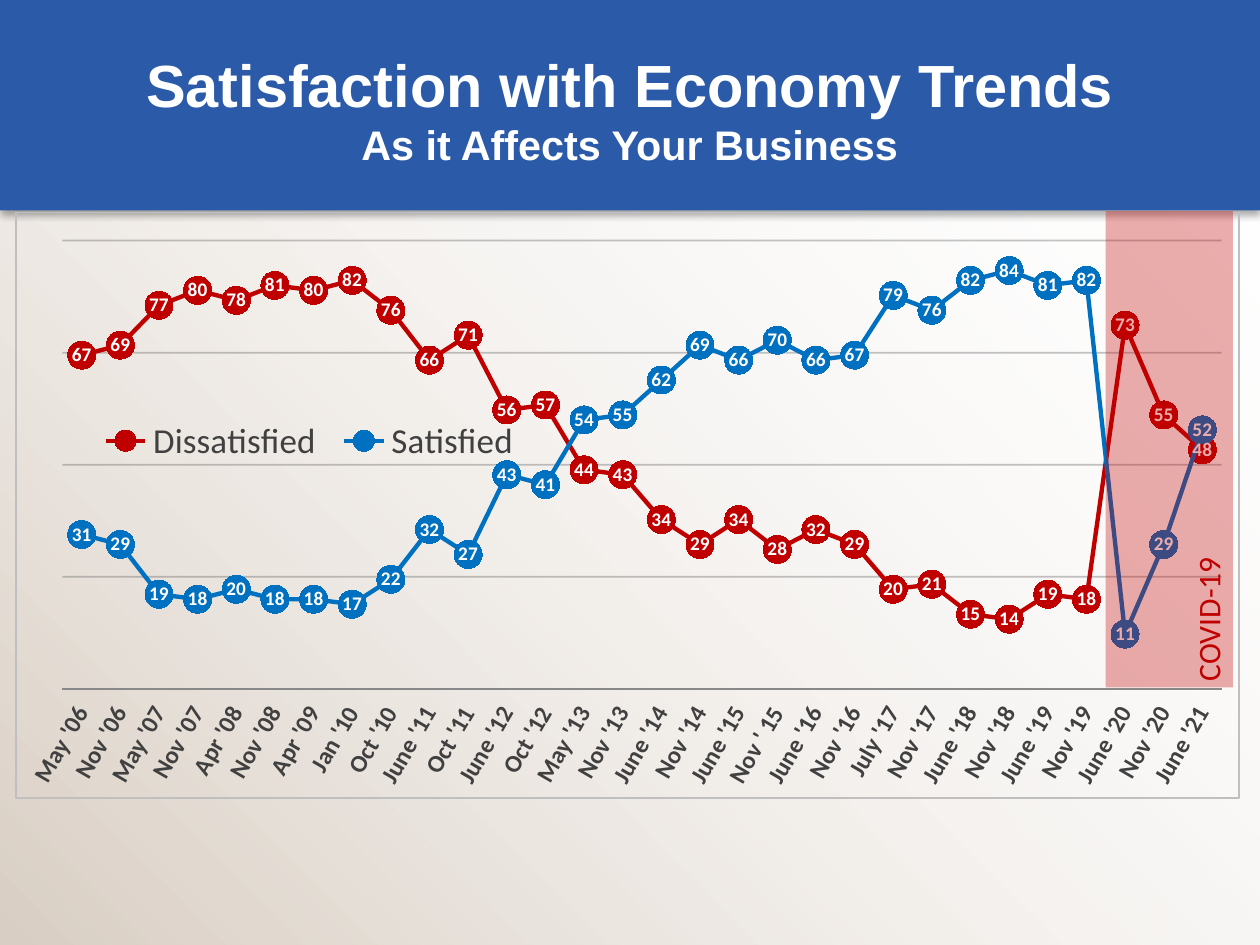
"""Build the slide on trends in satisfaction with the economy."""
from lxml.etree import SubElement
from pptx import Presentation
from pptx.chart.data import CategoryChartData
from pptx.dml.color import RGBColor
from pptx.enum.chart import (XL_CHART_TYPE, XL_LABEL_POSITION, XL_LEGEND_POSITION,
                             XL_MARKER_STYLE, XL_TICK_LABEL_POSITION, XL_TICK_MARK)
from pptx.enum.shapes import MSO_SHAPE
from pptx.enum.text import MSO_ANCHOR, PP_ALIGN
from pptx.oxml import parse_xml
from pptx.oxml.ns import nsdecls, qn
from pptx.util import Inches, Pt

WHITE = RGBColor(0xFF, 0xFF, 0xFF)
BLACK = RGBColor(0x00, 0x00, 0x00)
SAND = RGBColor(0xDA, 0xCF, 0xC4)
BANNER_BLUE = RGBColor(0x2B, 0x5A, 0xA9)
RED = RGBColor(0xC0, 0x00, 0x00)
BLUE = RGBColor(0x00, 0x70, 0xC0)
DARK_GREY = RGBColor(0x40, 0x40, 0x40)
AXIS_GREY = RGBColor(0x88, 0x88, 0x88)
GRID_GREY = RGBColor(0x66, 0x66, 0x66)

SURVEYS = [
    "May '06", "Nov '06", "May '07", "Nov '07", "Apr '08", "Nov '08", "Apr '09", "Jan '10",
    "Oct '10", "June '11", "Oct '11", "June '12", "Oct '12", "May '13", "Nov '13", "June '14",
    "Nov '14", "June '15", "Nov ' 15", "June '16", "Nov '16", "July '17", "Nov '17", "June '18",
    "Nov '18", "June '19", "Nov '19", "June '20", "Nov '20", "June '21"]
TRENDS = [
    ("Dissatisfied", RED, [67, 69, 77, 80, 78, 81, 80, 82, 76, 66, 71, 56, 57, 44, 43, 34, 29, 34,
                           28, 32, 29, 20, 21, 15, 14, 19, 18, 73, 55, 48]),
    ("Satisfied", BLUE, [31, 29, 19, 18, 20, 18, 18, 17, 22, 32, 27, 43, 41, 54, 55, 62, 69, 66,
                         70, 66, 67, 79, 76, 82, 84, 81, 82, 11, 29, 52])]


def style_font(font, size, color, bold=False, name="Calibri"):
    """Set the face, size, colour and weight of a font."""
    font.name, font.size, font.bold = name, Pt(size), bold
    font.color.rgb = color


def set_opacity(color_element, percent):
    """Make a colour partly transparent."""
    SubElement(color_element, qn("a:alpha")).set("val", str(percent * 1000))


def add_panel(slide, left, top, width, height):
    """Add a rectangle without outline or shadow."""
    panel = slide.shapes.add_shape(MSO_SHAPE.RECTANGLE, Inches(left), Inches(top),
                                   Inches(width), Inches(height))
    panel.shadow.inherit = False
    panel.line.fill.background()
    return panel


def add_backdrop(slide):
    """Cover the slide with a diagonal sand fade."""
    fill = add_panel(slide, 0, 0, 10, 7.5).fill
    fill.gradient()
    fill.gradient_angle = 45
    start, end = fill.gradient_stops
    start.color.rgb, end.color.rgb = SAND, WHITE
    start.position, end.position = 0, 1
    set_opacity(end._gs.find(qn("a:srgbClr")), 0)


def add_banner(slide):
    """Add the blue title band with its soft lower shadow."""
    banner = add_panel(slide, 0, 0, 10, 1.67)
    banner.fill.solid()
    banner.fill.fore_color.rgb = BANNER_BLUE
    effects = banner._element.spPr.find(qn("a:effectLst"))
    effects.append(parse_xml(
        f'<a:outerShdw {nsdecls("a")} blurRad="{Pt(4)}" dist="{Pt(2.2)}" dir="5400000" '
        'rotWithShape="0"><a:srgbClr val="000000"><a:alpha val="32000"/></a:srgbClr>'
        '</a:outerShdw>'))


def set_title(slide, heading, subheading):
    """Place the two-line title on top of the banner."""
    title = slide.shapes.title
    title.left, title.top = Inches(0.5), Inches(0.3)
    title.width, title.height = Inches(9), Inches(1.12)
    frame = title.text_frame
    frame.vertical_anchor = MSO_ANCHOR.MIDDLE
    frame.margin_left = frame.margin_right = Inches(0.05)
    frame.margin_top = frame.margin_bottom = Inches(0.05)
    paragraph = frame.paragraphs[0]
    paragraph.alignment = PP_ALIGN.CENTER
    for text, size in ((heading, 34), (subheading, 23.6)):
        if paragraph.runs:
            paragraph.add_line_break()
        run = paragraph.add_run()
        run.text = text
        style_font(run.font, size, WHITE, True, "Arial")
    slide.shapes._spTree.append(title._element)


def make_layout(x, y, w, h, inner=False):
    """Return a manual chart layout given in fractions of the chart."""
    target = '<c:layoutTarget val="inner"/>' if inner else ""
    return parse_xml(
        f'<c:layout {nsdecls("c")}><c:manualLayout>{target}'
        '<c:xMode val="edge"/><c:yMode val="edge"/>'
        f'<c:x val="{x}"/><c:y val="{y}"/><c:w val="{w}"/><c:h val="{h}"/>'
        '</c:manualLayout></c:layout>')


def drop_layout(element):
    """Remove the automatic layout of a chart part."""
    for layout in element.findall(qn("c:layout")):
        element.remove(layout)


def style_axes(chart):
    """Show slanted survey dates and faint value gridlines."""
    dates, percents = chart.category_axis, chart.value_axis
    for axis in (dates, percents):
        axis.major_tick_mark = axis.minor_tick_mark = XL_TICK_MARK.NONE
    dates.tick_label_position = XL_TICK_LABEL_POSITION.LOW
    style_font(dates.tick_labels.font, 14, DARK_GREY, True)
    dates._element.find(qn("c:txPr")).find(qn("a:bodyPr")).set("rot", "-3600000")
    dates.format.line.color.rgb = AXIS_GREY
    dates.format.line.width = Pt(1)
    percents.minimum_scale, percents.maximum_scale, percents.major_unit = 0, 90, 22.5
    percents.tick_label_position = XL_TICK_LABEL_POSITION.NONE
    percents.format.line.fill.background()
    grid = percents.major_gridlines.format.line
    grid.color.rgb, grid.width = GRID_GREY, Pt(1)
    set_opacity(next(percents._element.find(qn("c:majorGridlines")).iter(qn("a:srgbClr"))), 39)


def style_trend(trend, color):
    """Draw a series as a line with numbered round markers."""
    trend.smooth = False
    trend.format.line.color.rgb, trend.format.line.width = color, Pt(2.5)
    trend.marker.style, trend.marker.size = XL_MARKER_STYLE.CIRCLE, 16
    trend.marker.format.fill.solid()
    trend.marker.format.fill.fore_color.rgb = color
    trend.marker.format.line.color.rgb = color
    labels = trend.data_labels
    labels.show_value, labels.position = True, XL_LABEL_POSITION.CENTER
    labels.number_format, labels.number_format_is_linked = "0", False
    style_font(labels.font, 11, WHITE, True)


def add_trend_chart(slide):
    """Add the line chart of both satisfaction trends."""
    data = CategoryChartData()
    data.categories = SURVEYS
    for name, _, values in TRENDS:
        data.add_series(name, values)
    chart = slide.shapes.add_chart(XL_CHART_TYPE.LINE_MARKERS, Inches(0.12), Inches(1.68),
                                   Inches(9.72), Inches(4.66), data).chart
    style_font(chart.font, 10, BLACK)
    chart.has_title = False
    style_axes(chart)
    chart.plots[0].vary_by_categories = False
    for trend, (_, color, _) in zip(chart.plots[0].series, TRENDS):
        style_trend(trend, color)

    chart.has_legend = True
    legend = chart.legend
    legend.position, legend.include_in_layout = XL_LEGEND_POSITION.RIGHT, True
    style_font(legend.font, 20, DARK_GREY)
    drop_layout(legend._element)
    legend._element.find(qn("c:overlay")).addprevious(make_layout(0.06, 0.34, 0.36, 0.1))

    chart_part = chart._chartSpace.find(qn("c:chart"))
    plot_area = chart_part.find(qn("c:plotArea"))
    drop_layout(plot_area)
    plot_area.insert(0, make_layout(0.038, 0.048, 0.948, 0.766, inner=True))
    chart_part.addnext(parse_xml(
        f'<c:spPr {nsdecls("c", "a")}><a:noFill/><a:ln w="{Pt(1)}"><a:solidFill>'
        '<a:srgbClr val="BFBFBF"/></a:solidFill></a:ln></c:spPr>'))


def add_covid_band(slide):
    """Shade the pandemic surveys with a sideways caption."""
    band = add_panel(slide, 7.39, 3.06, 3.78, 1.01)
    band.rotation = 270
    band.fill.solid()
    band.fill.fore_color.rgb = RED
    set_opacity(next(band._element.spPr.iter(qn("a:srgbClr"))), 32)
    frame = band.text_frame
    frame.vertical_anchor = MSO_ANCHOR.BOTTOM
    frame.margin_left = frame.margin_right = Inches(0.05)
    frame.margin_top = frame.margin_bottom = Inches(0.05)
    caption = frame.paragraphs[0]
    caption.text = "COVID-19"
    caption.alignment = PP_ALIGN.LEFT
    style_font(caption.font, 18, RED)


def main():
    """Build and save the presentation."""
    deck = Presentation()
    deck.slide_width, deck.slide_height = Inches(10), Inches(7.5)
    slide = deck.slides.add_slide(deck.slide_layouts[5])
    add_backdrop(slide)
    add_banner(slide)
    set_title(slide, "Satisfaction with Economy Trends", "As it Affects Your Business")
    add_trend_chart(slide)
    add_covid_band(slide)
    deck.save("out.pptx")


if __name__ == "__main__":
    main()
